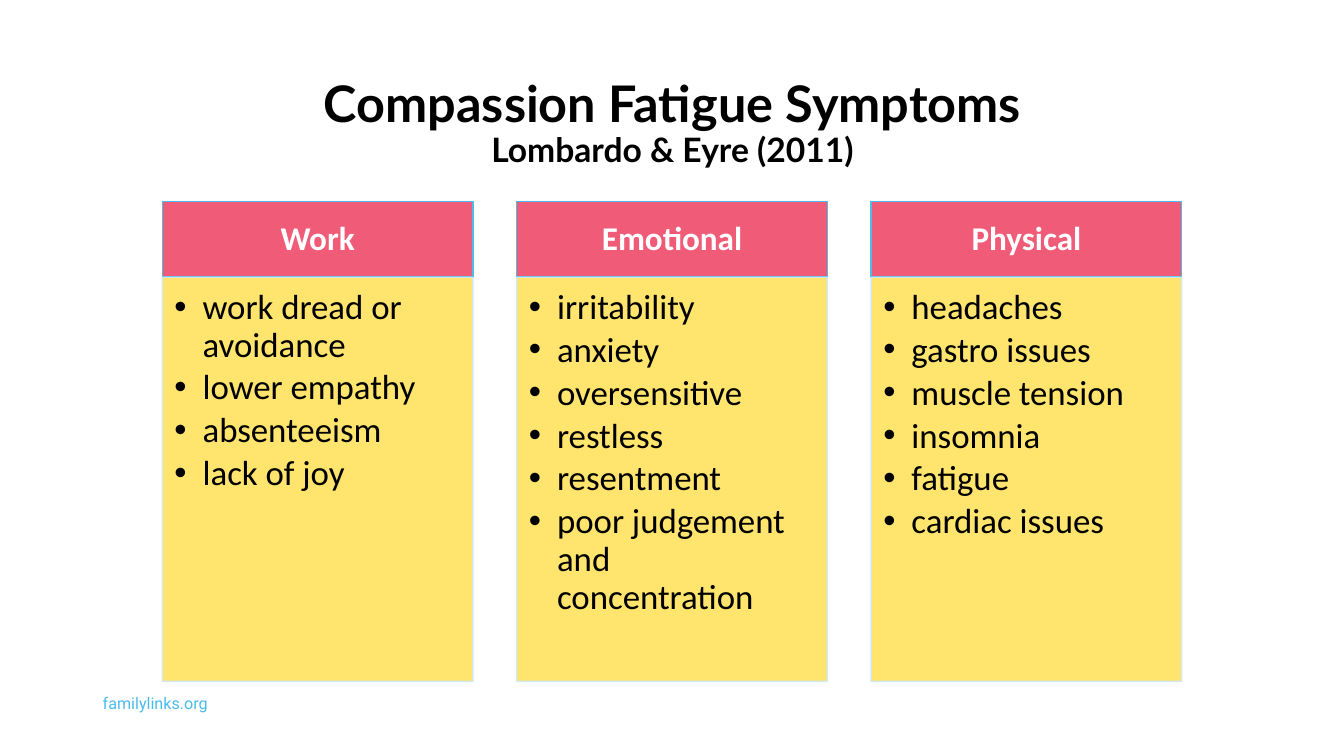
from lxml.etree import SubElement
from pptx import Presentation
from pptx.dml.color import RGBColor
from pptx.enum.shapes import MSO_SHAPE
from pptx.enum.text import MSO_ANCHOR, MSO_AUTO_SIZE, PP_ALIGN
from pptx.oxml.ns import qn
from pptx.util import Inches, Pt

# Content
TITLE = [("Compassion Fatigue Symptoms", 36), ("Lombardo & Eyre (2011)", 24)]
SYMPTOMS = {
    "Work": ["work dread or avoidance", "lower empathy", "absenteeism", "lack of joy"],
    "Emotional": ["irritability", "anxiety", "oversensitive", "restless",
                  "resentment", "poor judgement and concentration"],
    "Physical": ["headaches", "gastro issues", "muscle tension", "insomnia",
                 "fatigue", "cardiac issues"],
}
WEBSITE = "familylinks.org"

COLOURS = {"header": "F05B78", "header_line": "4BBBEA", "body": "FFE46D",
           "body_line": "D0E7F7", "website": "4BBBEB",
           "text": "000000", "header_text": "FFFFFF"}

# Grid, in inches
GRID_LEFT, GRID_TOP = 1.61, 2
COLUMN_WIDTH, COLUMN_STEP = 3.08, 3.515
HEADER_HEIGHT, BODY_HEIGHT = 0.75, 4.01
INDENT = 0.28


def colour(name):
    return RGBColor.from_string(COLOURS[name])


def style(font, face, size, colour_name, bold=False):
    font.name, font.size, font.bold = face, Pt(size), bold
    font.color.rgb = colour(colour_name)


def set_margins(frame, left, top, right, bottom):
    frame.margin_left, frame.margin_top = Inches(left), Inches(top)
    frame.margin_right, frame.margin_bottom = Inches(right), Inches(bottom)


def add_panel(page, left, top, height, kind, lines, size, margins, space):
    panel = page.shapes.add_shape(MSO_SHAPE.RECTANGLE, Inches(left), Inches(top),
                                  Inches(COLUMN_WIDTH), Inches(height))
    panel.shadow.inherit = False
    panel.fill.solid()
    panel.fill.fore_color.rgb = colour(kind)
    panel.line.color.rgb = colour(kind + "_line")
    panel.line.width = Pt(1)
    frame = panel.text_frame
    frame.word_wrap = True
    set_margins(frame, *margins)
    frame.text = "\n".join(lines)
    is_header = kind == "header"
    frame.vertical_anchor = MSO_ANCHOR.MIDDLE if is_header else MSO_ANCHOR.TOP
    for para in frame.paragraphs:
        para.alignment = PP_ALIGN.CENTER if is_header else PP_ALIGN.LEFT
        para.line_spacing = 0.9
        para.space_after = Pt(space)
        style(para.runs[0].font, "Calibri", size,
              "header_text" if is_header else "text", is_header)
    return panel


def add_bullet(para):
    para.level = 1
    properties = para._p.get_or_add_pPr()
    properties.set("marL", str(Inches(INDENT)))
    properties.set("indent", str(-Inches(INDENT)))
    SubElement(properties, qn("a:buFont"), typeface="Arial")
    SubElement(properties, qn("a:buChar"), char="•")


deck = Presentation()
deck.slide_width, deck.slide_height = Inches(13.33), Inches(7.5)
page = deck.slides.add_slide(deck.slide_layouts[5])

# Website
box = page.shapes.add_textbox(Inches(0.92), Inches(6.83), Inches(2.09), Inches(0.3))
box.text_frame.word_wrap = True
box.text_frame.text = WEBSITE
style(box.text_frame.paragraphs[0].runs[0].font, "Roboto", 11.5, "website")

# Title
title = page.shapes.title
title.left, title.top = Inches(0.92), Inches(0.61)
title.width, title.height = Inches(11.5), Inches(1.24)
frame = title.text_frame
frame.word_wrap = True
frame.auto_size = MSO_AUTO_SIZE.NONE
frame.vertical_anchor = MSO_ANCHOR.MIDDLE
para = frame.paragraphs[0]
para.text = "\v".join(line for line, size in TITLE)
para.alignment = PP_ALIGN.CENTER
para.line_spacing = 0.9
for span, (line, size) in zip(para.runs, TITLE):
    style(span.font, "Lato", size, "text", True)
for line_break in para._p.findall(qn("a:br")):
    SubElement(line_break, qn("a:rPr"), sz=str(TITLE[0][1] * 100))

# Symptom columns
for index, (heading, symptoms) in enumerate(SYMPTOMS.items()):
    left = GRID_LEFT + index * COLUMN_STEP
    add_panel(page, left, GRID_TOP, HEADER_HEIGHT, "header", [heading],
              23.7, (0.16, 0.09, 0.16, 0.09), 8.3)
    body = add_panel(page, left, GRID_TOP + HEADER_HEIGHT, BODY_HEIGHT, "body", symptoms,
                     24.9, (0.12, 0.12, 0.16, 0.18), 3.7)
    for para in body.text_frame.paragraphs:
        add_bullet(para)
    line_colour = body.line._ln.find(".//" + qn("a:srgbClr"))
    SubElement(line_colour, qn("a:alpha"), val="90000")

deck.save("out.pptx")
